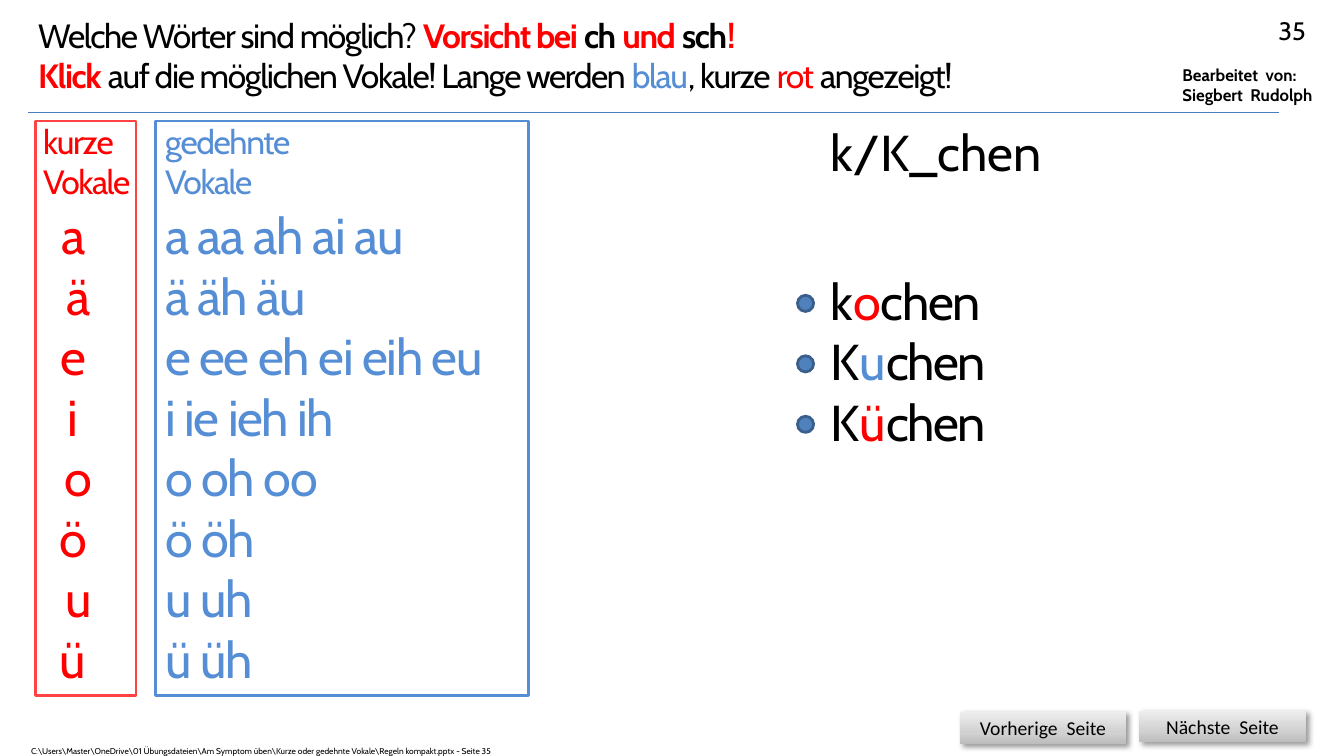
import pptx
import pptx.dml.color
import pptx.enum.shapes
import pptx.enum.text
import pptx.oxml
import pptx.oxml.ns
import pptx.util

Inches = pptx.util.Inches
Align = pptx.enum.text.PP_ALIGN
Shape = pptx.enum.shapes.MSO_SHAPE
COLORS = {
    "black": "000000", "red": "FF0000", "blue": "558ED5", "frame": "FF4343",
    "rule": "4B7EBC", "dot": "4F81BD", "ring": "3A5F8C",
    "dark": "BDBDBD", "middle": "D1D1D1", "light": "EEEEEE",
}
NAMESPACE = pptx.oxml.ns.nsdecls("a")


def rgb(name):
    """Return the named colour."""
    return pptx.dml.color.RGBColor.from_string(COLORS[name])


def write(frame, paragraphs, size=36, color="black", font="Cabin", bold=False,
          tight=True, align=None, before=0):
    """Fill a frame; a paragraph is a string or a list of (text, colour, bold)."""
    for index, content in enumerate(paragraphs):
        para = frame.paragraphs[0] if index == 0 else frame.add_paragraph()
        para.alignment = align
        para.space_before = pptx.util.Pt(before)
        if isinstance(content, str):
            content = [(content, color, bold)]
        for text, tone, strong in content:
            span = para.add_run()
            span.text = text
            span.font.name = font
            span.font.size = pptx.util.Pt(size)
            span.font.bold = strong
            span.font.color.rgb = rgb(tone)
            if tight:
                span._r.get_or_add_rPr().set("spc", "-100")


def add_text(page, left, top, width, height, paragraphs, wrap=True, grow=True, **style):
    """Add a text box with formatted paragraphs."""
    box = page.shapes.add_textbox(Inches(left), Inches(top), Inches(width), Inches(height))
    frame = box.text_frame
    frame.word_wrap = wrap
    sizing = pptx.enum.text.MSO_AUTO_SIZE
    frame.auto_size = sizing.SHAPE_TO_FIT_TEXT if grow else sizing.NONE
    write(frame, paragraphs, **style)


def add_figure(page, kind, left, top, width, height, line=None, fill=None):
    """Add a plain shape with an optional outline and fill."""
    figure = page.shapes.add_shape(kind, Inches(left), Inches(top), Inches(width), Inches(height))
    figure.shadow.inherit = False
    if fill:
        figure.fill.solid()
        figure.fill.fore_color.rgb = rgb(fill)
    else:
        figure.fill.background()
    if line:
        figure.line.color.rgb = rgb(line)
        figure.line.width = pptx.util.Pt(2)
    else:
        figure.line.fill.background()
    return figure


def add_button(page, left, top, width, height, label):
    """Add a grey gradient button with a soft shadow."""
    button = add_figure(page, Shape.RECTANGLE, left, top, width, height)
    button.fill.gradient()
    properties = button._element.spPr
    stops = "".join(
        f'<a:gs pos="{position}"><a:srgbClr val="{COLORS[tone]}"/></a:gs>'
        for position, tone in ((0, "dark"), (35000, "middle"), (100000, "light")))
    properties.replace(
        properties.find(pptx.oxml.ns.qn("a:gradFill")),
        pptx.oxml.parse_xml(f'<a:gradFill {NAMESPACE} rotWithShape="1"><a:gsLst>{stops}</a:gsLst>'
                            '<a:lin ang="16200000" scaled="0"/></a:gradFill>'))
    properties.find(pptx.oxml.ns.qn("a:effectLst")).append(pptx.oxml.parse_xml(
        f'<a:outerShdw {NAMESPACE} blurRad="50800" dist="38100" dir="2700000" algn="tl" '
        f'rotWithShape="0"><a:srgbClr val="{COLORS["black"]}"><a:alpha val="40000"/></a:srgbClr>'
        '</a:outerShdw>'))
    frame = button.text_frame
    frame.word_wrap = True
    frame.vertical_anchor = pptx.enum.text.MSO_ANCHOR.MIDDLE
    write(frame, [label], size=14, font="Calibri", tight=False, align=Align.CENTER)


def add_header(page, left, top):
    """Place the task, page number, author and dividing rule."""
    add_text(page, left, top, 11.42, 0.91, [
        [("Welche Wörter sind möglich? ", "black", False), ("Vorsicht bei ", "red", True),
         ("ch", "black", True), (" und ", "red", True), ("sch", "black", True),
         ("!", "red", True)],
        [("Klick ", "red", True), ("auf die möglichen Vokale! Lange werden ", "black", False),
         ("blau", "blue", False), (", kurze ", "black", False), ("rot", "red", False),
         (" angezeigt!", "black", False)]], size=24)
    add_text(page, left + 9.77, top, 3, 0.4, ["35"], grow=False, size=18, tight=False,
             align=Align.RIGHT)
    add_text(page, left + 11.35, top + 0.49, 1.6, 0.5, ["Bearbeitet  von:", "Siegbert  Rudolph"],
             wrap=False, size=12, bold=True, tight=False)
    rule = page.shapes.add_connector(
        pptx.enum.shapes.MSO_CONNECTOR.STRAIGHT, Inches(left), Inches(top + 1.02),
        Inches(left + 12.41), Inches(top + 1.02))
    rule.line.color.rgb = rgb("rule")
    rule.line.width = pptx.util.Pt(0.75)
    rule._element.spPr.append(pptx.oxml.parse_xml(f"<a:effectLst {NAMESPACE}/>"))


def add_short_vowels(page, left, top):
    """Place the framed column of short vowels."""
    add_text(page, left - 0.02, top - 0.05, 1.24, 0.91, ["kurze", "Vokale"], size=24, color="red")
    add_text(page, left + 0.13, top + 0.78, 0.59, 4.95, ["a  ä", "e ", "i ", "o ö ", "u ü "],
             color="red", align=Align.CENTER)
    add_figure(page, Shape.RECTANGLE, left, top, 1, 5.7, line="frame")


def add_long_vowels(page, left, top):
    """Place the framed column of long vowels."""
    add_text(page, left, top - 0.05, 1.7, 0.91, ["gedehnte", "Vokale"], size=24, color="blue")
    add_text(page, left, top + 0.78, 3.9, 4.95,
             ["a aa ah ai au", "ä äh äu", "e ee eh ei eih eu", "i ie ieh ih", "o oh oo",
              "ö öh", "u uh", "ü üh"], wrap=False, color="blue")
    add_figure(page, Shape.RECTANGLE, left, top, 3.7, 5.7, line="blue")


def add_words(page, left, top):
    """Place the word pattern and the possible words below it."""
    add_text(page, left, top, 2.35, 0.71, ["k/K_chen"], wrap=False, tight=False)
    words = [("k", "o", "red", 1.72), ("K", "u", "blue", 1.76), ("K", "ü", "red", 1.76)]
    for row, (initial, vowel, tone, width) in enumerate(words):
        y = top + 1.48 + 0.6 * row
        add_text(page, left, y, width, 0.71, [[(initial, "black", False), (vowel, tone, False),
                 ("chen", "black", False)]], wrap=False, before=6 if row else 0)
        add_figure(page, Shape.OVAL, left - 0.23, y + 0.3, 0.16, 0.16, line="ring", fill="dot")


def add_footer(page, left, top):
    """Place the file path and the navigation buttons."""
    add_button(page, left + 9.31, top, 1.65, 0.32, "Vorherige  Seite")
    add_button(page, left + 11.09, top - 0.01, 1.65, 0.31, "Nächste  Seite")
    location = (r"C:\Users\Master\OneDrive\01 Übungsdateien\Am Symptom üben"
                r"\Kurze oder gedehnte Vokale\Regeln kompakt.pptx - Seite 35")
    add_text(page, left, top + 0.29, 4.9, 0.2, [location], wrap=False, size=6, tight=False)


def main():
    """Build the vowel exercise slide."""
    deck = pptx.Presentation()
    deck.slide_width = Inches(13.33)
    deck.slide_height = Inches(7.5)
    page = deck.slides.add_slide(deck.slide_layouts[6])
    add_header(page, 0.28, 0.1)
    add_short_vowels(page, 0.35, 1.2)
    add_long_vowels(page, 1.54, 1.2)
    add_words(page, 8.14, 1.15)
    add_footer(page, 0.21, 7.06)
    deck.save("out.pptx")


if __name__ == "__main__":
    main()
